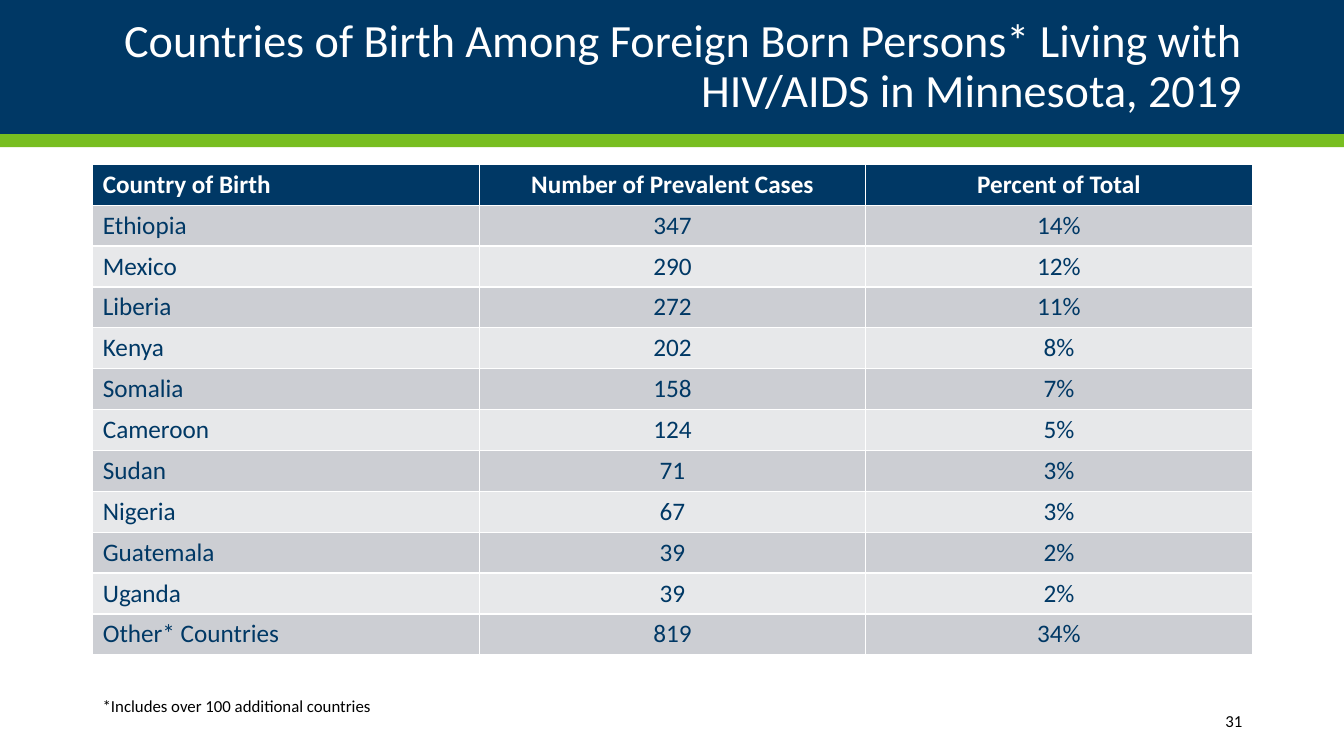
from pptx import Presentation
from pptx.dml.color import RGBColor
from pptx.enum.shapes import MSO_SHAPE as Shape
from pptx.enum.text import MSO_ANCHOR as Anchor, PP_ALIGN as Align
from pptx.util import Inches, Pt

NAVY = RGBColor(0x00, 0x38, 0x65)
GREEN = RGBColor(0x78, 0xBE, 0x21)
WHITE = RGBColor(0xFF, 0xFF, 0xFF)
BLACK = RGBColor(0x00, 0x00, 0x00)
DARK = RGBColor(0xCC, 0xCE, 0xD3)
LIGHT = RGBColor(0xE7, 0xE8, 0xEA)

WIDTH, HEIGHT = 13.33, 7.5
LEFT, SPAN = 0.92, 11.5

TITLE = "Countries of Birth Among Foreign Born Persons* Living with HIV/AIDS in Minnesota, 2019"
HEADS = ("Country of Birth", "Number of Prevalent Cases", "Percent of Total")
CASES = [
    ("Ethiopia", 347, 14),
    ("Mexico", 290, 12),
    ("Liberia", 272, 11),
    ("Kenya", 202, 8),
    ("Somalia", 158, 7),
    ("Cameroon", 124, 5),
    ("Sudan", 71, 3),
    ("Nigeria", 67, 3),
    ("Guatemala", 39, 2),
    ("Uganda", 39, 2),
    ("Other* Countries", 819, 34),
]


def style(par, size, color, align=Align.LEFT, bold=False):
    par.alignment = align
    font = par.font
    font.name, font.size, font.bold = "Calibri", Pt(size), bold
    font.color.rgb = color


def add_band(slide, x, y, w, h, color):
    band = slide.shapes.add_shape(Shape.RECTANGLE, Inches(x), Inches(y), Inches(w), Inches(h))
    band.shadow.inherit = False
    band.fill.solid()
    band.fill.fore_color.rgb = color
    band.line.fill.background()
    return band


def add_header(slide, x, y, w, h):
    title = slide.shapes.title
    for top, tall, color in ((y, h, NAVY), (y + h, 0.13, GREEN)):
        band = add_band(slide, x, top, w, tall, color)
        title._element.addprevious(band._element)
    title.left, title.top = Inches(x + LEFT), Inches(y + 0.17)
    title.width, title.height = Inches(SPAN), Inches(h - 0.33)
    frame = title.text_frame
    frame.text = TITLE
    frame.word_wrap = True
    frame.vertical_anchor = Anchor.MIDDLE
    par = frame.paragraphs[0]
    par.line_spacing = 0.9
    style(par, 33, WHITE, Align.RIGHT)


def add_cases(slide, x, y, w, h):
    rows = [HEADS] + [(name, str(count), f"{share}%") for name, count, share in CASES]
    table = slide.shapes.add_table(
        len(rows), len(HEADS), Inches(x), Inches(y), Inches(w), Inches(h)
    ).table
    for r, row in enumerate(rows):
        head = r == 0
        fill = NAVY if head else DARK if r % 2 else LIGHT
        for c, text in enumerate(row):
            cell = table.cell(r, c)
            cell.text = text
            cell.fill.solid()
            cell.fill.fore_color.rgb = fill
            align = Align.CENTER if c else Align.LEFT
            style(cell.text_frame.paragraphs[0], 18, WHITE if head else NAVY, align, head)


def add_note(slide, x, y, w, h, text, align):
    frame = slide.shapes.add_textbox(Inches(x), Inches(y), Inches(w), Inches(h)).text_frame
    frame.word_wrap = True
    frame.vertical_anchor = Anchor.MIDDLE
    frame.text = text
    style(frame.paragraphs[0], 12, BLACK, align)


def main():
    deck = Presentation()
    deck.slide_width, deck.slide_height = Inches(WIDTH), Inches(HEIGHT)
    slide = deck.slides.add_slide(deck.slide_layouts[5])
    add_header(slide, 0, 0, WIDTH, 1.33)
    add_note(slide, LEFT + SPAN - 1.6, 6.95, 1.6, 0.4, "31", Align.RIGHT)
    add_cases(slide, LEFT, 1.63, SPAN, 4.87)
    add_note(slide, LEFT, 6.8, SPAN, 0.4, "*Includes over 100 additional countries", Align.LEFT)
    deck.save("out.pptx")


if __name__ == "__main__":
    main()
